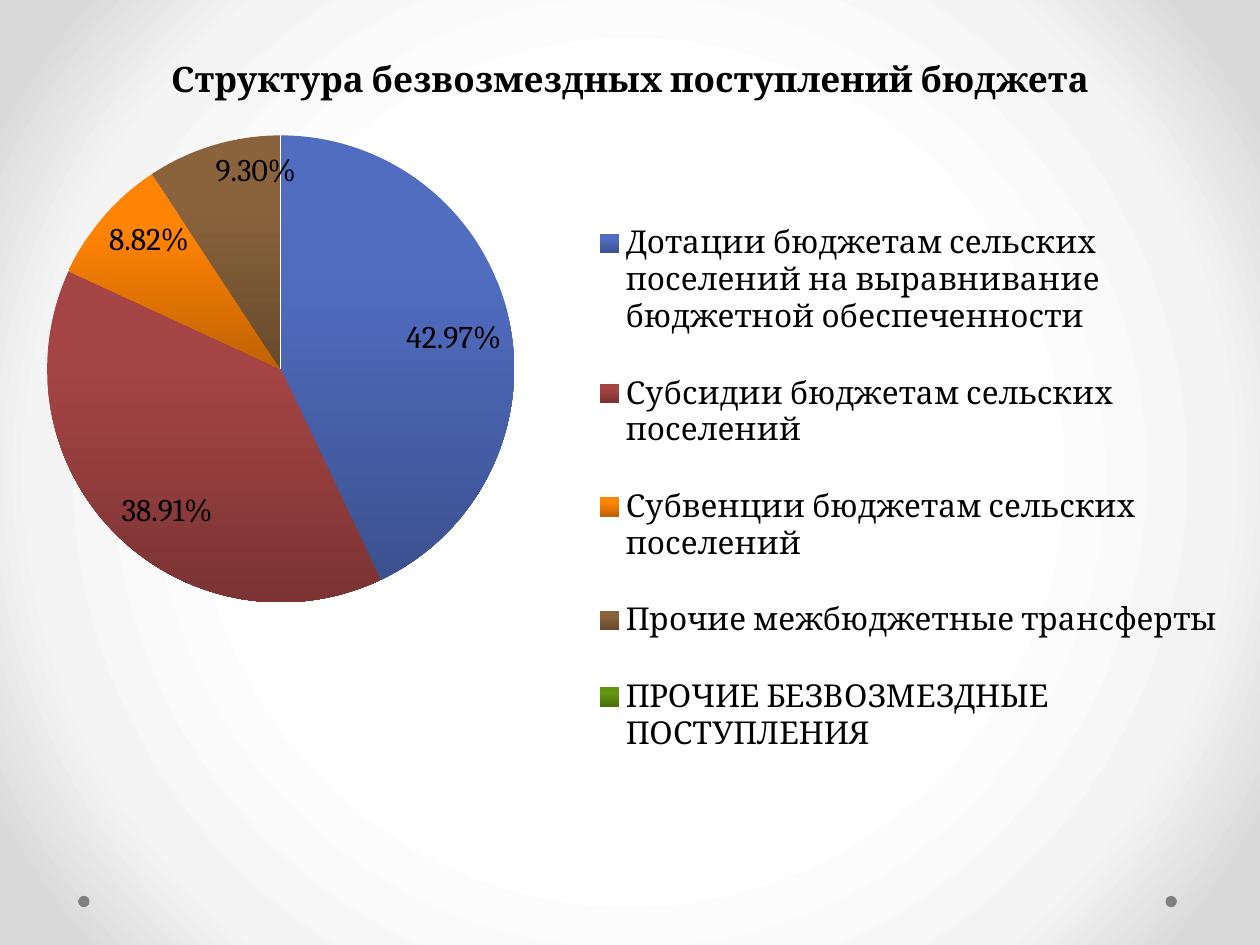
from lxml.etree import SubElement as Sub
from pptx import Presentation
from pptx.chart.data import CategoryChartData as Data
from pptx.dml.color import RGBColor as Rgb
from pptx.enum.chart import XL_CHART_TYPE as Kind, XL_LABEL_POSITION as Spot, XL_LEGEND_POSITION as Side
from pptx.enum.shapes import MSO_SHAPE as Form
from pptx.enum.text import MSO_ANCHOR as Anchor, PP_ALIGN as Align
from pptx.oxml import parse_xml
from pptx.oxml.ns import qn
from pptx.util import Inches, Pt

BLACK = Rgb(0, 0, 0)
GRAY = Rgb(0x80, 0x80, 0x80)
GLOW = ((50, Rgb(0xFF, 0xFF, 0xFF)), (76, Rgb(0xF4, 0xF4, 0xF4)), (92, Rgb(0xDA, 0xDA, 0xDA)))
BLUE = Rgb(0x50, 0x6D, 0xC0)
RED = Rgb(0xA4, 0x44, 0x44)
ORANGE = Rgb(0xFF, 0x83, 0x04)
BROWN = Rgb(0x8A, 0x63, 0x3C)
GREEN = Rgb(0x63, 0x96, 0x10)
PARTS = (
    ("Дотации бюджетам сельских поселений на выравнивание бюджетной обеспеченности", 42.97, BLUE),
    ("Субсидии бюджетам сельских поселений", 38.91, RED),
    ("Субвенции бюджетам сельских поселений", 8.82, ORANGE),
    ("Прочие межбюджетные трансферты", 9.3, BROWN),
    ("ПРОЧИЕ БЕЗВОЗМЕЗДНЫЕ ПОСТУПЛЕНИЯ", 0, GREEN),
)


class Deck:
    """Holds the font, the slide size and the current slide."""

    font = "Cambria"
    wide, high = Inches(10), Inches(7.5)

    def __init__(self):
        self.show = Presentation()
        self.show.slide_width, self.show.slide_height = self.wide, self.high
        self.page = self.show.slides.add_slide(self.show.slide_layouts[5])

    def box(self, left, top, width, height):
        return [round(share * size) for share, size in
                zip((left, top, width, height), (self.wide, self.high) * 2)]

    def style(self, font, size, bold=False):
        font.name, font.size, font.bold = self.font, Pt(size), bold
        font.color.rgb = BLACK

    def glow(self, stops):
        self.page.background.fill.solid()
        prop = self.page.background._cSld.bg.bgPr
        marks = "".join(f'<a:gs pos="{at * 1000}"><a:srgbClr val="{tone}"/></a:gs>' for at, tone in stops)
        fill = parse_xml(
            '<a:gradFill xmlns:a="http://schemas.openxmlformats.org/drawingml/2006/main" rotWithShape="1">'
            f'<a:gsLst>{marks}</a:gsLst><a:path path="circle">'
            '<a:fillToRect l="50000" t="50000" r="50000" b="50000"/></a:path></a:gradFill>')
        prop.replace(prop.find(qn("a:solidFill")), fill)

    def dot(self, left, top, size):
        shape = self.page.shapes.add_shape(
            Form.OVAL, *self.box(left, top, size, size * self.wide / self.high))
        shape.shadow.inherit = False
        shape.fill.solid()
        shape.fill.fore_color.rgb = GRAY
        shape.line.fill.background()

    def title(self, text, *area):
        shape = self.page.shapes.title
        shape.left, shape.top, shape.width, shape.height = self.box(*area)
        frame = shape.text_frame
        frame.text, frame.word_wrap = text, True
        frame.vertical_anchor = Anchor.BOTTOM
        line = frame.paragraphs[0]
        line.alignment, line.line_spacing = Align.CENTER, Pt(58)
        self.style(line.font, 20, True)

    def place(self, node, area, inner=False):
        old = node.find(qn("c:layout"))
        if old is not None:
            node.remove(old)
        lay = Sub(node, qn("c:layout"))
        node.insert(1 if node.tag == qn("c:legend") else 0, lay)
        rule = Sub(lay, qn("c:manualLayout"))
        if inner:
            Sub(rule, qn("c:layoutTarget"), val="inner")
        for key in "xy":
            Sub(rule, qn(f"c:{key}Mode"), val="edge")
        for key, share in zip("xywh", area):
            Sub(rule, qn(f"c:{key}"), val=str(share))

    def shade(self, fill, tone):
        fill.gradient()
        fill.gradient_angle = 270
        light, dark = fill.gradient_stops
        light.position, dark.position = 0.3, 1
        light.color.rgb = tone
        dark.color.rgb = Rgb(*(int(part * 0.75) for part in tone))

    def pie(self, parts, plot, key, *area):
        names, values, tones = zip(*parts)
        data = Data()
        data.categories = names
        data.add_series("Series 1", values)
        chart = self.page.shapes.add_chart(Kind.PIE, *self.box(*area), data).chart
        self.style(chart.font, 18)
        chart.has_title = False
        chart.has_legend = True
        chart.legend.position = Side.RIGHT
        chart.legend.include_in_layout = False
        self.place(chart.legend._element, key)
        pie = chart.plots[0]
        pie.vary_by_categories = True
        self.place(chart._chartSpace.chart.plotArea, plot, True)
        for spot, tone in enumerate(tones):
            self.shade(pie.series[0].points[spot].format.fill, tone)
        labels = pie.series[0].data_labels
        labels.show_percentage, labels.show_value = True, False
        labels.number_format, labels.number_format_is_linked = "0.00%", False
        labels.position = Spot.INSIDE_END
        self.style(labels.font, 18)
        for point, value in enumerate(values):
            if not value:
                label = Sub(labels._element, qn("c:dLbl"))
                labels._element.insert(0, label)
                Sub(label, qn("c:idx"), val=str(point))
                Sub(label, qn("c:delete"), val="1")


def main():
    deck = Deck()
    deck.glow(GLOW)
    for left in (0.925, 0.062):
        deck.dot(left, 0.948, 0.009)
    deck.title("Структура безвозмездных поступлений бюджета", 0.05, 0, 0.9, 0.112)
    deck.pie(PARTS, (0.013, 0.071, 0.425, 0.554), (0.47, 0.13, 0.52, 0.72),
             0, 0.08, 0.988, 0.892)
    deck.show.save("out.pptx")


if __name__ == "__main__":
    main()
